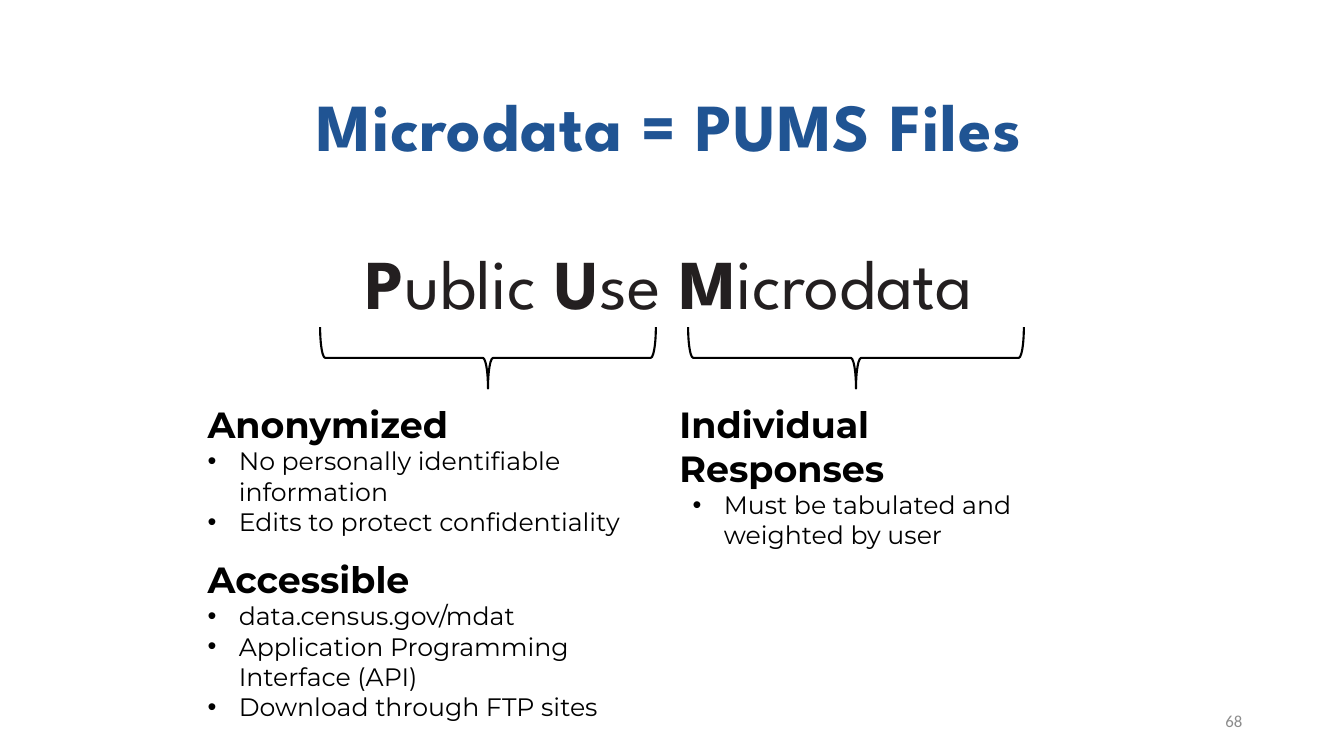
from lxml.etree import SubElement
from pptx import Presentation
from pptx.dml.color import RGBColor
from pptx.enum.shapes import MSO_SHAPE as Shape
from pptx.enum.text import MSO_ANCHOR as Anchor, PP_ALIGN as Align
from pptx.oxml.ns import qn
from pptx.util import Inches, Pt

BLUE = RGBColor(0x20, 0x54, 0x93)
CHARCOAL = RGBColor(0x23, 0x1F, 0x20)
BLACK = RGBColor(0, 0, 0)
GRAY = RGBColor(0x8C, 0x8C, 0x8C)
HEADLINE_FONT, BODY_FONT, NUMBER_FONT = "League Spartan", "Montserrat", "Calibri"

TITLE = "Microdata = PUMS Files"
ACRONYM = [("P", "ublic"), (" U", "se"), (" M", "icrodata")]
PAGE_NUMBER = "68"
# Each column: left, width, bullet text indent, sections of (heading, bullets)
COLUMNS = [
    (1.96, 4.65, 0.31, [
        ("Anonymized", ["No personally identifiable information",
                        "Edits to protect confidentiality"]),
        ("Accessible", ["data.census.gov/mdat",
                        "Application Programming Interface (API)",
                        "Download through FTP sites"]),
    ]),
    (6.64, 3.95, 0.44, [
        ("Individual Responses", ["Must be tabulated and weighted by user"]),
    ]),
]
COLUMN_TOP, COLUMN_HEIGHTS = 3.94, (2.69, 1.14)
HANGING, SECTION_GAP = 0.31, 14.6
BRACE_CENTERS, BRACE_MIDDLE = (4.84, 8.49), 3.55
BRACE_DEPTH, BRACE_SPAN = 0.61, 3.33

prs = Presentation()
prs.slide_width, prs.slide_height = Inches(13.33), Inches(7.5)
slide = prs.slides.add_slide(prs.slide_layouts[6])


def add_frame(left, top, width, height, anchor=Anchor.TOP):
    box = slide.shapes.add_textbox(*map(Inches, (left, top, width, height)))
    frame = box.text_frame
    frame.word_wrap = True
    frame.vertical_anchor = anchor
    return frame


def style(run, font_name, size, color, bold=False):
    font = run.font
    font.name, font.size, font.bold = font_name, Pt(size), bold
    font.color.rgb = color


def add_bullet(paragraph, indent):
    props = paragraph._p.get_or_add_pPr()
    props.set("marL", str(Inches(indent)))
    props.set("indent", str(-Inches(HANGING)))
    SubElement(props, qn("a:buFont")).set("typeface", "Arial")
    SubElement(props, qn("a:buChar")).set("char", "•")


def add_title():
    paragraph = add_frame(1.03, 0.61, 11.23, 1.09, Anchor.BOTTOM).paragraphs[0]
    paragraph.text = TITLE
    paragraph.alignment, paragraph.line_spacing = Align.CENTER, 0.9
    run = paragraph.runs[0]
    style(run, HEADLINE_FONT, 48, BLUE, bold=True)
    run.font._element.set("spc", "60")


def add_acronym():
    paragraph = add_frame(2.15, 2.33, 8.98, 0.91).paragraphs[0]
    paragraph.alignment = Align.CENTER
    for initial, rest in ACRONYM:
        for text, bold in ((initial, True), (rest, False)):
            run = paragraph.add_run()
            run.text = text
            style(run, HEADLINE_FONT, 50, CHARCOAL, bold)


def add_brace(center):
    """Turn a left brace so that its tip points down to its column."""
    brace = slide.shapes.add_shape(
        Shape.LEFT_BRACE, Inches(center - BRACE_DEPTH / 2),
        Inches(BRACE_MIDDLE - BRACE_SPAN / 2), Inches(BRACE_DEPTH), Inches(BRACE_SPAN))
    brace.rotation = 270
    brace.shadow.inherit = False
    brace.fill.background()
    brace.line.color.rgb, brace.line.width = BLACK, Pt(1.5)


def add_column(left, width, indent, sections, height):
    frame = add_frame(left, COLUMN_TOP, width, height)
    for number, (heading, bullets) in enumerate(sections):
        paragraph = frame.add_paragraph() if number else frame.paragraphs[0]
        paragraph.text = heading
        if number:
            paragraph.space_before = Pt(SECTION_GAP)
        style(paragraph.runs[0], BODY_FONT, 26, BLACK, bold=True)
        for bullet in bullets:
            paragraph = frame.add_paragraph()
            paragraph.text = bullet
            add_bullet(paragraph, indent)
            style(paragraph.runs[0], BODY_FONT, 18, BLACK)


def add_page_number():
    paragraph = add_frame(9.42, 6.95, 3, 0.4, Anchor.MIDDLE).paragraphs[0]
    paragraph.text = PAGE_NUMBER
    paragraph.alignment = Align.RIGHT
    style(paragraph.runs[0], NUMBER_FONT, 12, GRAY)


add_title()
add_acronym()
for brace_center in BRACE_CENTERS:
    add_brace(brace_center)
for column, column_height in zip(COLUMNS, COLUMN_HEIGHTS):
    add_column(*column, column_height)
add_page_number()
prs.save("out.pptx")
